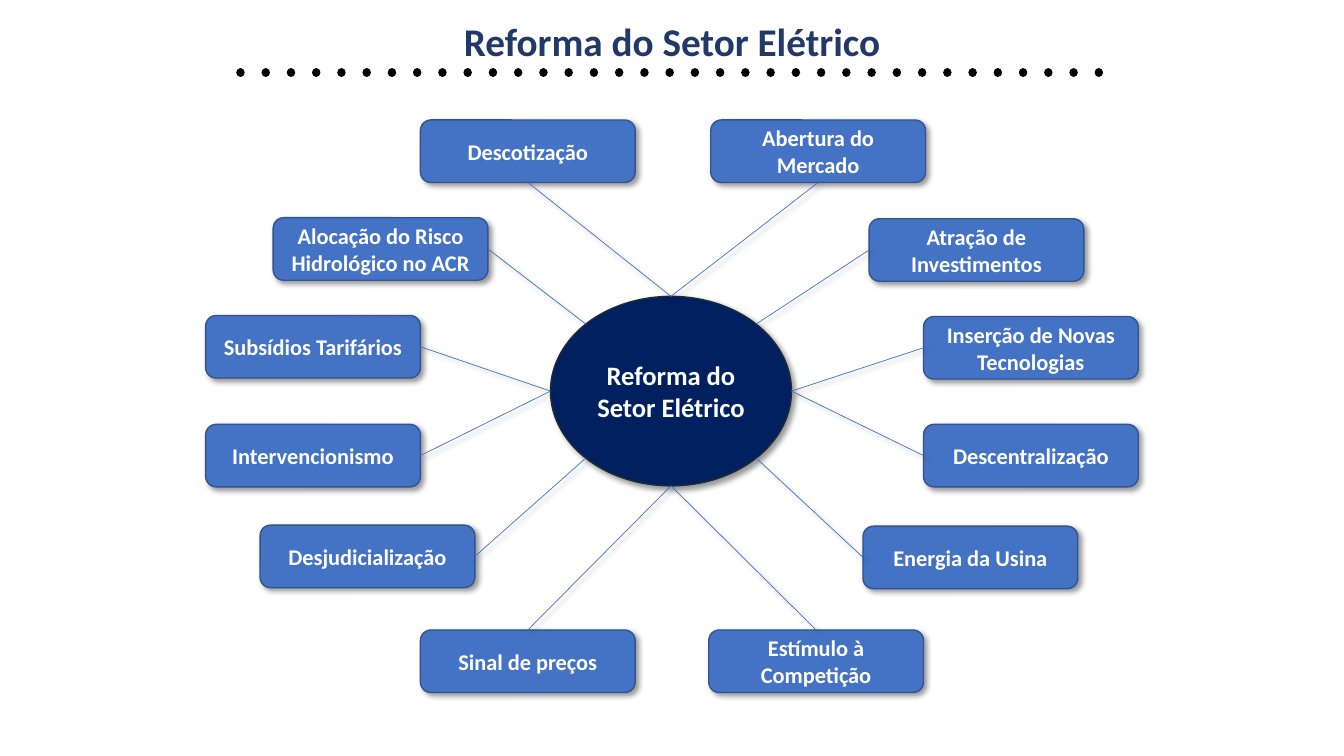
from math import cos, radians, sin

from lxml import etree
from pptx import Presentation
from pptx.dml.color import RGBColor
from pptx.enum.shapes import MSO_CONNECTOR as Connector, MSO_SHAPE as Shape
from pptx.enum.text import MSO_ANCHOR as Anchor, PP_ALIGN as Align
from pptx.oxml import parse_xml
from pptx.oxml.ns import nsdecls, qn
from pptx.util import Inches, Pt

COLORS = {
    "title": "213868", "dots": "000000", "hub": "002060", "hub_edge": "222A35",
    "topic": "4472C4", "topic_edge": "325491", "text": "FFFFFF", "shadow": "000000",
}
TOP, LEFT, BOTTOM, RIGHT = range(4)
TOPIC_SIZE = (2.13, 0.62)
TOPICS = [
    ("Descotização", 4.17, 1.19, BOTTOM, 270),
    ("Alocação do Risco Hidrológico no ACR", 2.71, 2.16, RIGHT, 225),
    ("Subsídios Tarifários", 2.04, 3.13, RIGHT, 180),
    ("Intervencionismo", 2.04, 4.21, RIGHT, 180),
    ("Desjudicialização", 2.58, 5.21, RIGHT, 135),
    ("Sinal de preços", 4.17, 6.25, TOP, 90),
    ("Abertura do Mercado", 7.05, 1.19, BOTTOM, 270),
    ("Atração de Investimentos", 8.62, 2.17, LEFT, 315),
    ("Inserção de Novas Tecnologias", 9.16, 3.14, LEFT, 0),
    ("Descentralização", 9.16, 4.21, LEFT, 0),
    ("Energia da Usina", 8.56, 5.22, LEFT, 45),
    ("Estímulo à Competição", 7.03, 6.25, TOP, 90),
]


def color(name):
    """Return the named colour."""
    return RGBColor.from_string(COLORS[name])


def write_text(shape, text, size, fill="text", spacing=None):
    """Write one bold, centred paragraph in the middle of a shape."""
    frame = shape.text_frame
    frame.word_wrap = True
    frame.vertical_anchor = Anchor.MIDDLE
    para = frame.paragraphs[0]
    para.alignment = Align.CENTER
    para.line_spacing = spacing
    span = para.add_run()
    span.text = text
    span.font.name = "Calibri"
    span.font.size = Pt(size)
    span.font.bold = True
    span.font.color.rgb = color(fill)


def add_effects(shape, shadow=True):
    """Set an effect list, with a soft shadow to the lower right if wanted."""
    properties = shape._element.spPr
    for old in properties.findall(qn("a:effectLst")):
        properties.remove(old)
    effects = etree.SubElement(properties, qn("a:effectLst"))
    if shadow:
        effects.append(parse_xml(
            f'<a:outerShdw {nsdecls("a")} blurRad="{Pt(4)}" dist="{Pt(3)}" '
            f'dir="2700000" algn="tl" rotWithShape="0"><a:srgbClr val="{COLORS["shadow"]}">'
            '<a:alpha val="40000"/></a:srgbClr></a:outerShdw>'))


def add_line(page, begin, end, fill, width):
    """Add a straight connector between two points."""
    line = page.shapes.add_connector(
        Connector.STRAIGHT, *(Inches(value) for value in (*begin, *end)))
    line.line.color.rgb = color(fill)
    line.line.width = Pt(width)
    return line


def add_node(page, kind, box, text, size, fill):
    """Add a filled shape with an edge, a shadow and a label."""
    node = page.shapes.add_shape(kind, *(Inches(value) for value in box))
    node.fill.solid()
    node.fill.fore_color.rgb = color(fill)
    node.line.color.rgb = color(fill + "_edge")
    node.line.width = Pt(1)
    node.shadow.inherit = False
    add_effects(node)
    write_text(node, text, size)
    return node


def add_heading(page, box, text):
    """Place the title in the box with a dotted rule below it."""
    left, top, width, height = box
    title = page.shapes.title
    title.left, title.top, title.width, title.height = (Inches(value) for value in box)
    frame = title.text_frame
    frame.margin_left = frame.margin_right = Inches(0.03)
    frame.margin_top = frame.margin_bottom = Inches(0.03)
    write_text(title, text, 28, "title", 1.2)
    middle, rule_top = left + width / 2, top + height + 0.07
    rule = add_line(page, (middle - 4.28, rule_top), (middle + 4.28, rule_top), "dots", 6)
    stroke = rule.line._get_or_add_ln()
    stroke.set("cap", "rnd")
    stroke.append(parse_xml(
        f'<a:custDash {nsdecls("a")}><a:ds d="100000" sp="200000"/></a:custDash>'))
    stroke.append(parse_xml(f'<a:round {nsdecls("a")}/>'))
    add_effects(rule, shadow=False)


def add_mind_map(page, box, text):
    """Place the hub in the box and tie every topic to its rim."""
    left, top, width, height = box
    add_node(page, Shape.OVAL, box, text, 19, "hub")
    for label, topic_left, topic_top, side, angle in TOPICS:
        topic_box = (topic_left, topic_top, *TOPIC_SIZE)
        topic = add_node(page, Shape.ROUNDED_RECTANGLE, topic_box, label, 16, "topic")
        rim = (left + width / 2 * (1 + cos(radians(angle))),
               top + height / 2 * (1 + sin(radians(angle))))
        spoke = add_line(page, (topic_left, topic_top), rim, "topic", 0.5)
        spoke.begin_connect(topic, side)
        add_effects(spoke)


def main():
    """Build the deck and save it."""
    deck = Presentation()
    deck.slide_width, deck.slide_height = Inches(13.33), Inches(7.5)
    page = deck.slides.add_slide(deck.slide_layouts[5])
    add_heading(page, (0, 0.07, 13.33, 0.58), "Reforma do Setor Elétrico")
    add_mind_map(page, (5.46, 2.94, 2.39, 1.88), "Reforma do Setor Elétrico")
    deck.save("out.pptx")


if __name__ == "__main__":
    main()
